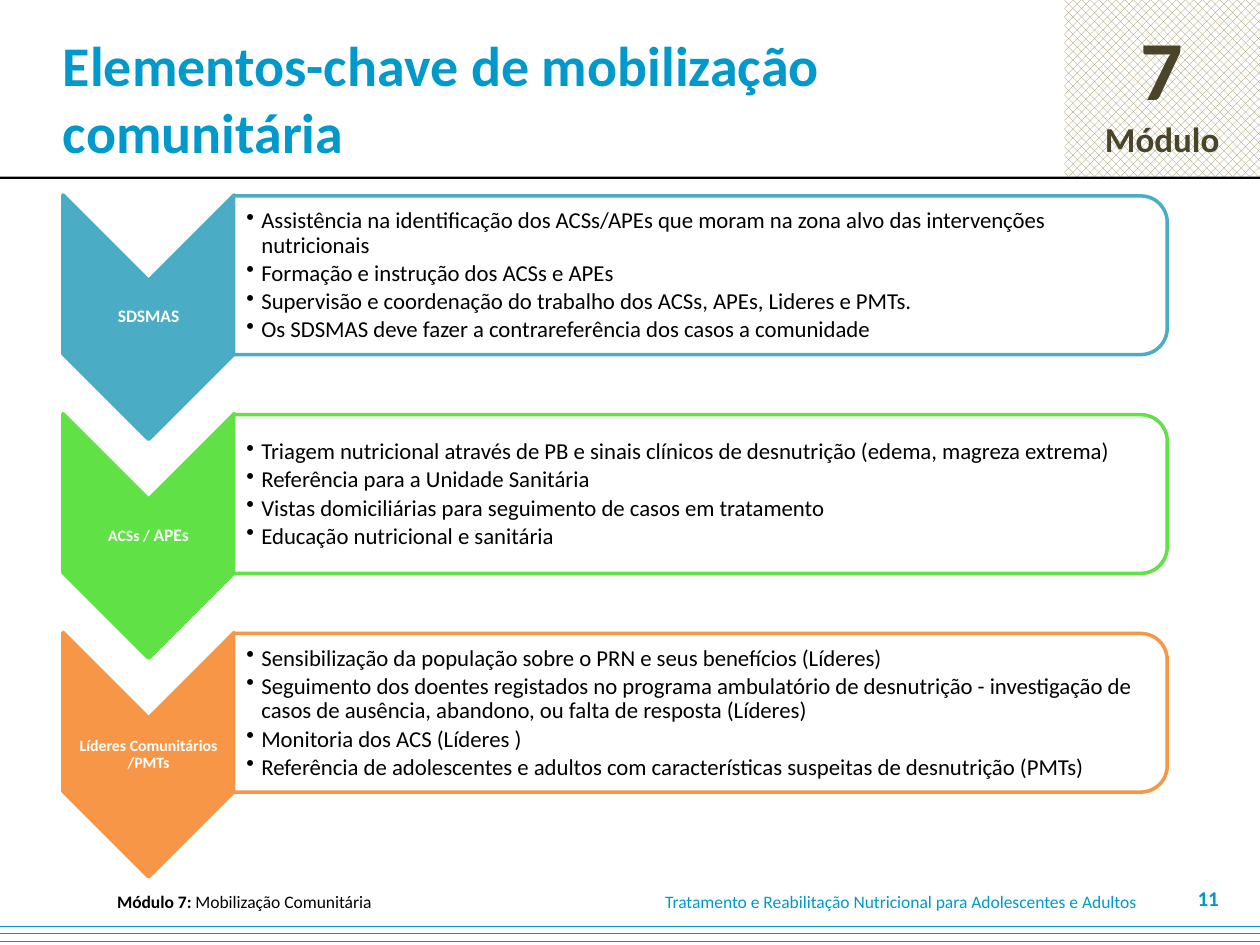
from lxml import etree
from pptx import Presentation
from pptx import util as u
from pptx.dml.color import RGBColor
from pptx.enum import dml, shapes, text
from pptx.oxml.ns import qn

TITLE = "Elementos-chave de mobilização comunitária"
MODULE = [[("7", 48)], [("Módulo", 20)]]
COURSE = "Tratamento e Reabilitação Nutricional para Adolescentes e Adultos"
PAGE = "11"
STEPS = [
    ([("SDSMAS", 10)], "4BACC6", [
        "Assistência na identificação dos ACSs/APEs que moram na zona alvo das intervenções nutricionais",
        "Formação e instrução dos ACSs e APEs",
        "Supervisão e coordenação do trabalho dos ACSs, APEs, Lideres e PMTs.",
        "Os SDSMAS deve fazer a contrareferência dos casos a comunidade",
    ]),
    ([("ACSs / ", 9), ("APEs", 10)], "60E146", [
        "Triagem nutricional através de PB e sinais clínicos de desnutrição (edema, magreza extrema)",
        "Referência para a Unidade Sanitária",
        "Vistas domiciliárias para seguimento de casos em tratamento",
        "Educação nutricional e sanitária",
    ]),
    ([("Líderes Comunitários /PMTs", 9)], "F79646", [
        "Sensibilização da população sobre o PRN e seus benefícios (Líderes)",
        "Seguimento dos doentes registados no programa ambulatório de desnutrição - "
        "investigação de casos de ausência, abandono, ou falta de resposta (Líderes)",
        "Monitoria dos ACS (Líderes )",
        "Referência de adolescentes e adultos com características suspeitas de desnutrição (PMTs)",
    ]),
]

THEME = {
    "font": "Calibri", "blue": "0099CC", "black": "000000", "white": "FFFFFF",
    "olive": "4A452A", "hatch": "948A54",
    "title": 32, "body": 13, "foot": 10, "page": 12,
}
WIDE, HIGH = 25.4, 19.05
PITCH = 4.41
SHAPE = shapes.MSO_SHAPE
ALIGN = text.PP_ALIGN


def color(name):
    return RGBColor.from_string(THEME.get(name, name))


def write(item, paras, tint, bold=False, align=ALIGN.LEFT, pad=(0.25, 0.13, 0.25, 0.13)):
    frame = item.text_frame
    frame.word_wrap = True
    frame.vertical_anchor = text.MSO_ANCHOR.MIDDLE
    frame.margin_left, frame.margin_top, frame.margin_right, frame.margin_bottom = map(u.Cm, pad)
    for n, runs in enumerate(paras):
        para = frame.add_paragraph() if n else frame.paragraphs[0]
        para.alignment = align
        for words, size, *rest in runs:
            run = para.add_run()
            run.text = words
            font = run.font
            font.name, font.size = THEME["font"], u.Pt(size)
            font.bold = rest[0] if rest else bold
            font.color.rgb = color(tint)
    return frame.paragraphs


def label(slide, spot, *args, **style):
    return write(slide.shapes.add_textbox(*map(u.Cm, spot)), *args, **style)


def block(slide, kind, spot, fill, line=None, turn=0):
    item = slide.shapes.add_shape(kind, *map(u.Cm, spot))
    item.shadow.inherit = False
    item.rotation = turn
    item.fill.solid()
    item.fill.fore_color.rgb = color(fill)
    if line:
        item.line.color.rgb = color(line)
        item.line.width = u.Pt(2)
    else:
        item.line.fill.background()
    return item


def hatch(item, kind, tint):
    item.fill.patterned()
    item.fill.pattern = kind
    item.fill.fore_color.rgb = color(tint)
    item.fill.back_color.rgb = color("white")


def space(paras, after):
    for para in paras:
        para.line_spacing = 0.9
        para.space_after = u.Pt(after)


def bullet(para):
    props = para._p.get_or_add_pPr()
    props.set("marL", str(u.Cm(0.3)))
    props.set("indent", str(u.Cm(-0.3)))
    etree.SubElement(props, qn("a:buChar")).set("char", "•")


def step(slide, row, name, tint, points):
    drop = row * PITCH
    block(slide, SHAPE.CHEVRON, (0.53, 4.67 + drop, 4.93, 3.45), tint, tint, 90)
    paras = label(slide, (1.27, 5.66 + drop, 3.45, 1.47), [name], "white",
                  bold=True, align=ALIGN.CENTER, pad=(0.03,) * 4)
    space(paras, 3.5)
    block(slide, SHAPE.ROUND_2_SAME_RECTANGLE, (12.52, -3.86 + drop, 3.2, 18.82),
          "white", tint, 90)
    paras = label(slide, (4.72, 4.11 + drop, 18.64, 2.9),
                  [[(point, THEME["body"])] for point in points], "black",
                  pad=(0.25, 0.03, 0.03, 0.03))
    space(paras, 2)
    for para in paras:
        bullet(para)


def main():
    deck = Presentation()
    deck.slide_width, deck.slide_height = u.Cm(WIDE), u.Cm(HIGH)
    slide = deck.slides.add_slide(deck.slide_layouts[6])

    badge = block(slide, SHAPE.RECTANGLE, (21.46, 0, 3.94, 3.56), "white")
    hatch(badge, dml.MSO_PATTERN.PERCENT_50, "hatch")
    write(badge, MODULE, "olive", bold=True, align=ALIGN.CENTER)
    block(slide, SHAPE.RECTANGLE, (0, 3.56, WIDE, 0.05), "black")
    strip = block(slide, SHAPE.RECTANGLE, (0, 18.52, WIDE, 0.53), "white")
    hatch(strip, dml.MSO_PATTERN.DASHED_HORIZONTAL, "blue")

    foot = THEME["foot"]
    label(slide, (13.16, 17.91, 10.29, 0.51), [[(COURSE, foot)]], "blue")
    label(slide, (2.11, 17.91, 10.97, 0.51),
          [[("Módulo 7: ", foot, True), ("Mobilização Comunitária", foot)]], "black")
    label(slide, (0, 0, 21.79, 3.94), [[(TITLE, THEME["title"])]], "blue",
          bold=True, pad=(1.27, 0.13, 0.25, 0.13))
    label(slide, (23.55, 17.78, 1.27, 0.64), [[(PAGE, THEME["page"])]], "blue",
          bold=True, align=ALIGN.RIGHT)

    for row, parts in enumerate(STEPS):
        step(slide, row, *parts)
    deck.save("out.pptx")


if __name__ == "__main__":
    main()
